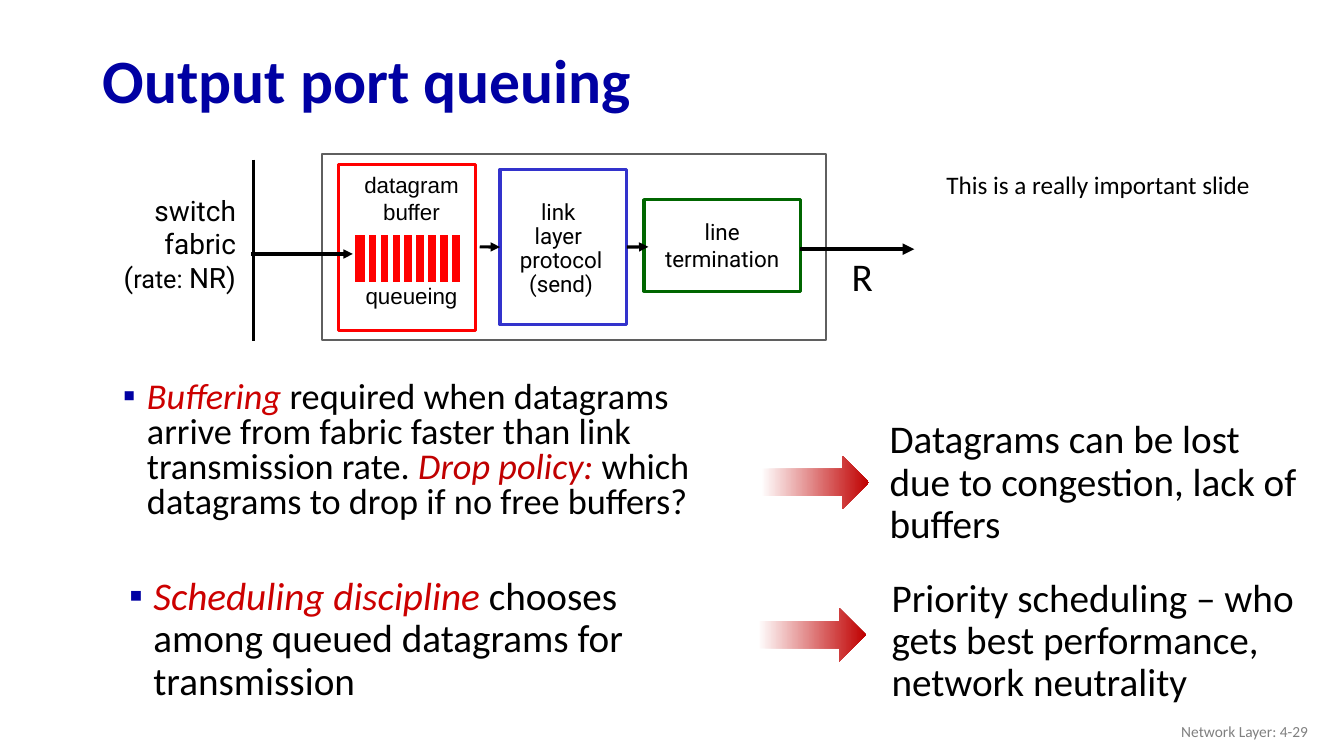
from pptx import Presentation
from pptx.dml.color import RGBColor
from pptx.enum.shapes import MSO_CONNECTOR, MSO_SHAPE
from pptx.enum.text import MSO_ANCHOR, MSO_AUTO_SIZE, PP_ALIGN
from pptx.oxml.ns import qn
from pptx.util import Cm, Pt
from lxml.etree import SubElement

BLACK, WHITE, NAVY, RED = "000000", "FFFFFF", "0000A3", "FF0000"
TERM_RED, ARROW_RED = "CC0000", "C00000"


def color(value):
    return RGBColor.from_string(value)


def place(shape, left, top, width, height):
    shape.left, shape.top = Cm(left), Cm(top)
    shape.width, shape.height = Cm(width), Cm(height)


def format_span(span, size, font="Calibri", tint=BLACK, italic=False):
    span.font.size, span.font.name = Pt(size), font
    span.font.color.rgb = color(tint)
    span.font.italic = italic


def write(shape, text, size, font="Calibri", tint=BLACK, align=PP_ALIGN.LEFT,
          anchor=MSO_ANCHOR.TOP, wrap=True, spacing=None):
    """Fill a shape with uniformly formatted text, one paragraph per line."""
    frame = shape.text_frame
    frame.text = text
    frame.word_wrap, frame.vertical_anchor = wrap, anchor
    for para in frame.paragraphs:
        para.alignment, para.line_spacing = align, spacing
        for span in para.runs:
            format_span(span, size, font, tint)
    return frame


def add_text(shapes, box, text, size, **style):
    shape = shapes.add_textbox(*map(Cm, box))
    return write(shape, text, size, **style)


def add_block(shapes, box, fill=WHITE, outline=None, weight=2.25,
              kind=MSO_SHAPE.RECTANGLE):
    block = shapes.add_shape(kind, *map(Cm, box))
    block.shadow.inherit = False
    block.fill.solid()
    block.fill.fore_color.rgb = color(fill)
    if outline:
        block.line.color.rgb = color(outline)
        block.line.width = Pt(weight)
    else:
        block.line.fill.background()
    return block


def add_line(shapes, start, end, tint=BLACK, weight=2.25, arrow=False):
    line = shapes.add_connector(MSO_CONNECTOR.STRAIGHT, *map(Cm, start + end))
    line.line.color.rgb = color(tint)
    line.line.width = Pt(weight)
    properties = line._element.spPr
    if arrow:
        SubElement(properties.find(qn("a:ln")), qn("a:tailEnd"), type="triangle")
    SubElement(properties, qn("a:effectLst"))
    return line


def fill_title(title, box):
    place(title, *box)
    frame = write(title, "Output port queuing", 44, tint=NAVY,
                  anchor=MSO_ANCHOR.MIDDLE, spacing=0.9)
    frame.auto_size = MSO_AUTO_SIZE.NONE
    frame.paragraphs[0].runs[0].font.bold = True


def fill_bullet(body, box, spans, size, spacing):
    """Write (text, colour) spans as one bullet; coloured spans are italic."""
    place(body, *box)
    frame = body.text_frame
    frame.auto_size = MSO_AUTO_SIZE.NONE
    frame.word_wrap = True
    para = frame.paragraphs[0]
    para.line_spacing, para.space_before = spacing, Pt(10)
    for text, tint in spans:
        span = para.add_run()
        span.text = text
        format_span(span, size, tint=tint, italic=tint != BLACK)
    properties = para._p.get_or_add_pPr()
    properties.set("marL", str(Cm(0.99)))
    properties.set("indent", str(Cm(-0.61)))
    bullet_color = SubElement(properties, qn("a:buClr"))
    SubElement(bullet_color, qn("a:srgbClr"), val=NAVY)
    SubElement(properties, qn("a:buFont"), typeface="Arial")
    SubElement(properties, qn("a:buChar"), char="▪")


def draw_queue(shapes, left, top):
    """Draw the red buffer with its label and the slots of the queue."""
    add_block(shapes, (left, top, 3.45, 4.19), outline=RED)
    add_block(shapes, (left + 0.35, top + 1.73, 2.77, 1.3), RED, WHITE, 3)
    for slot in range(8):
        x = left + 0.7 + 0.3 * slot
        add_line(shapes, (x, top + 1.76), (x, top + 3), WHITE, 3)
    label = add_text(shapes, (left + 0.23, top + 0.05, 3.2, 4.06),
                     "datagram\nbuffer\nqueueing", 16, font="Arial",
                     align=PP_ALIGN.CENTER, wrap=False)
    label.paragraphs[2].space_before = Pt(41)


def draw_port(page, left, top):
    """Draw the output port from the switch fabric to the outgoing link."""
    shapes = page.shapes.add_group_shape().shapes

    def at(x, y, *size):
        return (left + x, top + y) + size

    add_block(shapes, at(4.83, 0, 12.7, 4.67), outline="5F5F5F", weight=1.5)
    termination = add_block(shapes, at(12.95, 1.14, 3.94, 2.31), outline="006600")
    write(termination, "line\ntermination", 16, font="Roboto", wrap=False,
          align=PP_ALIGN.CENTER, anchor=MSO_ANCHOR.MIDDLE)

    link = add_block(shapes, at(9.32, 0.38, 3.2, 3.91), outline="3333CC")
    link_label = add_block(shapes, at(9.4, 1.24, 2.92, 2.31))
    write(link_label, "link \nlayer \nprotocol\n(send)", 16, font="Roboto",
          wrap=False, align=PP_ALIGN.CENTER, anchor=MSO_ANCHOR.MIDDLE, spacing=0.9)
    to_link = add_line(shapes, at(8.81, 2.33), at(9.32, 2.33), arrow=True)
    to_link.end_connect(link, 1)
    from_link = add_line(shapes, at(12.52, 2.33), at(13.06, 2.33), arrow=True)
    from_link.begin_connect(link, 3)

    fabric = add_block(shapes, at(0, 1.09, 2.92, 2.31))
    frame = write(fabric, "switch\nfabric\n(", 20, font="Roboto", wrap=False,
                  align=PP_ALIGN.RIGHT, anchor=MSO_ANCHOR.MIDDLE)
    for text, size in (("rate: ", 18), ("NR)", 20)):
        span = frame.paragraphs[2].add_run()
        span.text = text
        format_span(span, size, "Roboto")

    draw_queue(shapes, *at(5.26, 0.25))
    add_line(shapes, at(3.1, 0.13), at(3.1, 4.7))
    add_line(shapes, at(3.05, 2.51), at(5.61, 2.51), arrow=True)
    add_line(shapes, at(16.89, 2.39), at(19.76, 2.39), weight=2.75, arrow=True)
    add_text(shapes, at(17.93, 2.34, 0.89, 1.45), "R", 28)


def draw_consequence(page, box, arrow_left, arrow_top, text):
    """Draw a fading arrow that leads to the text in the box."""
    shapes = page.shapes.add_group_shape().shapes
    write(add_block(shapes, box), text, 28, spacing=0.9)
    arrow = add_block(shapes, (arrow_left, arrow_top, 2.72, 1.35),
                      kind=MSO_SHAPE.RIGHT_ARROW)
    arrow.fill.gradient()
    arrow.fill.gradient_angle = 0
    for stop, tint in zip(arrow.fill.gradient_stops, (WHITE, ARROW_RED)):
        stop.color.rgb = color(tint)


def build_slide(deck):
    page = deck.slides.add_slide(deck.slide_layouts[3])
    title, buffering, scheduling = page.placeholders
    fill_title(title, (2.34, 0.86, 29.21, 2.49))
    fill_bullet(buffering, (2.46, 9.5, 16.61, 3.94), (
        ("Buffering", TERM_RED),
        (" required when datagrams arrive from fabric faster than link "
         "transmission rate. ", BLACK),
        ("Drop policy: ", ARROW_RED),
        ("which datagrams to drop if no free buffers?", BLACK)), 25.9, 0.8)
    fill_bullet(scheduling, (2.62, 14.4, 14.25, 3.58), (
        ("Scheduling discipline", TERM_RED),
        (" chooses among queued datagrams for transmission", BLACK)), 28, 0.9)
    draw_consequence(page, (22.17, 10.46, 10.97, 3.48), 19.18, 11.48,
                     "Datagrams can be lost due to congestion, lack of buffers")
    draw_consequence(page, (22.22, 14.45, 11.63, 3.48), 19.1, 15.32,
                     "Priority scheduling – who gets best performance, "
                     "network neutrality")
    add_text(page.shapes, (23.6, 4.14, 8.26, 1.02),
             "This is a really important slide", 18, wrap=False)
    draw_port(page, 3.28, 3.89)
    add_text(page.shapes, (25.6, 17.91, 7.62, 1.02), "Network Layer: 4-29", 11,
             tint="808080", align=PP_ALIGN.RIGHT, anchor=MSO_ANCHOR.MIDDLE)


def main():
    deck = Presentation()
    deck.slide_width, deck.slide_height = Cm(33.87), Cm(19.05)
    build_slide(deck)
    deck.save("out.pptx")


if __name__ == "__main__":
    main()
